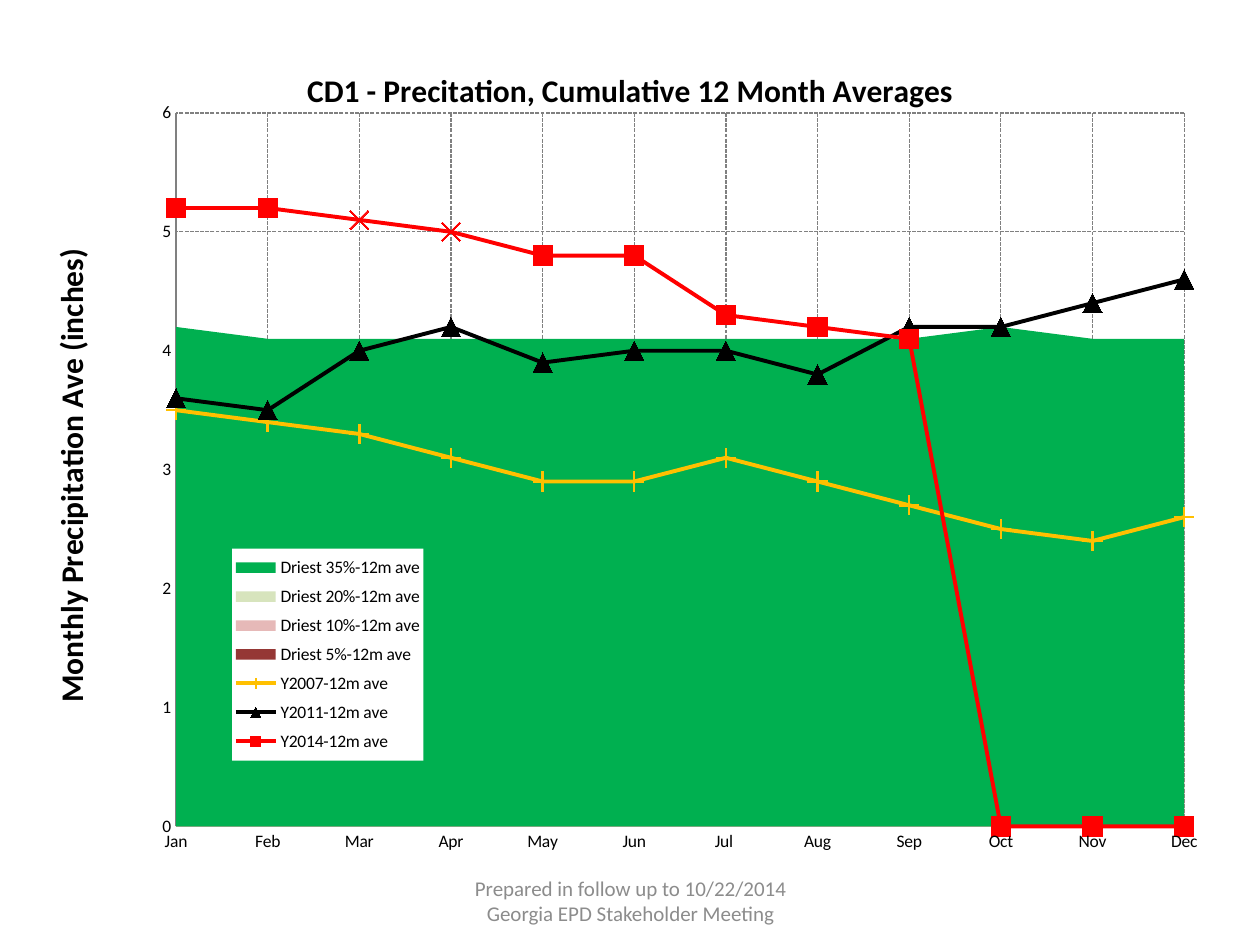
from lxml import etree
from pptx import Presentation
from pptx.chart.data import CategoryChartData
from pptx.dml.color import RGBColor
from pptx.enum import chart as charts, dml, text
from pptx.oxml.ns import qn
from pptx.util import Cm, Pt

TITLE = "CD1 - Precitation, Cumulative 12 Month Averages"
AXIS_TITLE = "Monthly Precipitation Ave (inches)"
FOOTER = "Prepared in follow up to 10/22/2014\vGeorgia EPD Stakeholder Meeting"
MONTHS = ["Jan", "Feb", "Mar", "Apr", "May", "Jun", "Jul ", "Aug", "Sep", "Oct", "Nov", "Dec"]
COLORS = {
    "green": "00B050", "pale green": "D7E4BD", "pink": "E6B9B8", "maroon": "953735",
    "amber": "FFC000", "black": "000000", "red": "FF0000", "grid": "808080",
    "footer": "8C8C8C", "white": "FFFFFF",
}
MARKERS = charts.XL_MARKER_STYLE
AREAS = [
    ("Driest 35%-12m ave", "green", [4.2, 4.1, 4.1, 4.1, 4.1, 4.1, 4.1, 4.1, 4.1, 4.2, 4.1, 4.1]),
    ("Driest 20%-12m ave", "pale green", [3.8, 3.9, 3.9, 3.9, 3.9, 3.9, 3.8, 3.8, 3.9, 3.9, 3.8, 3.8]),
    ("Driest 10%-12m ave", "pink", [3.5, 3.5, 3.5, 3.6, 3.5, 3.4, 3.5, 3.6, 3.5, 3.6, 3.5, 3.6]),
    ("Driest 5%-12m ave", "maroon", [3.4, 3.4, 3.3, 3.2, 3.2, 3.3, 3.2, 3.2, 3.2, 3.3, 3.4, 3.4]),
]
LINES = [
    ("Y2007-12m ave", "amber", [3.5, 3.4, 3.3, 3.1, 2.9, 2.9, 3.1, 2.9, 2.7, 2.5, 2.4, 2.6], MARKERS.PLUS),
    ("Y2011-12m ave", "black", [3.6, 3.5, 4, 4.2, 3.9, 4, 4, 3.8, 4.2, 4.2, 4.4, 4.6], MARKERS.TRIANGLE),
    ("Y2014-12m ave", "red", [5.2, 5.2, 5.1, 5, 4.8, 4.8, 4.3, 4.2, 4.1, None, None, None], MARKERS.SQUARE),
]
CROSSED_MONTHS = [2, 3]


def rgb(name):
    return RGBColor.from_string(COLORS[name])


def add_element(parent, tag, value):
    child = etree.SubElement(parent, qn(tag))
    child.set("val", str(value))
    return child


def set_layout(parent, previous_tag=None, inner=False, **percents):
    for old in parent.findall(qn("c:layout")):
        parent.remove(old)
    layout = etree.Element(qn("c:layout"))
    manual = etree.SubElement(layout, qn("c:manualLayout"))
    if inner:
        add_element(manual, "c:layoutTarget", "inner")
    for key in ("x", "y"):
        add_element(manual, f"c:{key}Mode", "edge")
    for key, percent in percents.items():
        add_element(manual, f"c:{key}", round(percent / 100, 4))
    if previous_tag:
        parent.find(qn(previous_tag)).addnext(layout)
    else:
        parent.insert(0, layout)


def style_text(font, size, color="black", bold=False):
    font.name, font.size, font.bold = "Calibri", Pt(size), bold
    font.color.rgb = rgb(color)


def set_title(title, words):
    title.text_frame.text = words
    style_text(title.text_frame.paragraphs[0].font, 18, bold=True)


def move_lines(chart):
    area_plot = chart.element.xpath(".//c:areaChart")[0]
    line_plot = etree.Element(qn("c:lineChart"))
    area_plot.addnext(line_plot)
    add_element(line_plot, "c:grouping", "standard")
    add_element(line_plot, "c:varyColors", 0)
    for series in area_plot.findall(qn("c:ser"))[len(AREAS):]:
        line_plot.append(series)
    add_element(line_plot, "c:marker", 1)
    for axis_id in area_plot.findall(qn("c:axId")):
        add_element(line_plot, "c:axId", axis_id.get("val"))


def style_marker(marker, style, color):
    marker.style, marker.size = style, 11
    marker.format.fill.solid()
    marker.format.fill.fore_color.rgb = rgb(color)
    marker.format.line.color.rgb = rgb(color)
    marker.format.line.width = Pt(0.75)


def style_line(line, color):
    line.color.rgb = rgb(color)
    line.width = Pt(2.25)


def style_series(chart):
    area_plot, line_plot = chart.plots
    area_plot.vary_by_categories = False
    for series, (_, color, _) in zip(area_plot.series, AREAS):
        series.format.fill.solid()
        series.format.fill.fore_color.rgb = rgb(color)
        series.format.line.fill.background()
    for series, (_, color, _, style) in zip(line_plot.series, LINES):
        series.smooth = False
        style_line(series.format.line, color)
        style_marker(series.marker, style, color)
    for month in CROSSED_MONTHS:
        point = series.points[month]
        style_line(point.format.line, color)
        style_marker(point.marker, MARKERS.X, color)


def style_axes(chart):
    for axis in (chart.category_axis, chart.value_axis):
        axis.has_major_gridlines = True
        axis.major_tick_mark = axis.minor_tick_mark = charts.XL_TICK_MARK.NONE
        grid = axis.major_gridlines.format.line
        grid.color.rgb = axis.format.line.color.rgb = rgb("grid")
        grid.width = axis.format.line.width = Pt(0.75)
        grid.dash_style = dml.MSO_LINE.SQUARE_DOT
        style_text(axis.tick_labels.font, 10)
    value_axis = chart.value_axis
    value_axis.minimum_scale, value_axis.maximum_scale, value_axis.major_unit = 0, 6, 1
    value_axis.tick_labels.number_format = "#,##0"
    value_axis.tick_labels.number_format_is_linked = False
    set_title(value_axis.axis_title, AXIS_TITLE)
    chart.element.xpath(".//c:valAx/c:crossBetween")[0].set("val", "midCat")


def add_precipitation_chart(slide):
    data = CategoryChartData()
    data.categories = MONTHS
    for name, _, values, *_ in AREAS + LINES:
        data.add_series(name, values)
    chart = slide.shapes.add_chart(
        charts.XL_CHART_TYPE.AREA, Cm(0.66), Cm(0.79), Cm(24.08), Cm(17.5), data).chart
    style_text(chart.font, 10)
    move_lines(chart)
    style_series(chart)
    style_axes(chart)
    chart.has_title = True
    set_title(chart.chart_title, TITLE)
    chart.has_legend = True
    legend = chart.legend
    legend.position = charts.XL_LEGEND_POSITION.RIGHT
    legend.include_in_layout = False
    style_text(legend.font, 10)

    root = chart.element.find(qn("c:chart"))
    for old in root.findall(qn("c:dispBlanksAs")):
        root.remove(old)
    blanks = etree.Element(qn("c:dispBlanksAs"), val="zero")
    root.find(qn("c:plotVisOnly")).addnext(blanks)

    legend_element = root.find(qn("c:legend"))
    properties = etree.Element(qn("c:spPr"))
    fill = etree.SubElement(properties, qn("a:solidFill"))
    add_element(fill, "a:srgbClr", COLORS["white"])
    legend_element.find(qn("c:txPr")).addprevious(properties)
    set_layout(root.find(qn("c:plotArea")), inner=True, x=12, y=8.5, w=84.4, h=82.2)
    set_layout(legend_element, "c:legendPos", x=16.7, y=58.7, w=16, h=24.4)
    set_layout(root.find(qn("c:title")), "c:tx", x=22.5, y=2.7)
    set_layout(root.xpath(".//c:valAx/c:title")[0], "c:tx", x=0.9, y=23.5)


def add_footer(slide):
    frame = slide.shapes.add_textbox(Cm(8.69), Cm(17.65), Cm(8.05), Cm(1.02)).text_frame
    frame.word_wrap = True
    frame.vertical_anchor = text.MSO_ANCHOR.MIDDLE
    frame.text = FOOTER
    paragraph = frame.paragraphs[0]
    paragraph.alignment = text.PP_ALIGN.CENTER
    style_text(paragraph.font, 12, "footer")


def main():
    presentation = Presentation()
    presentation.slide_width, presentation.slide_height = Cm(25.4), Cm(19.05)
    slide = presentation.slides.add_slide(presentation.slide_layouts[6])
    add_precipitation_chart(slide)
    add_footer(slide)
    presentation.save("out.pptx")


if __name__ == "__main__":
    main()
